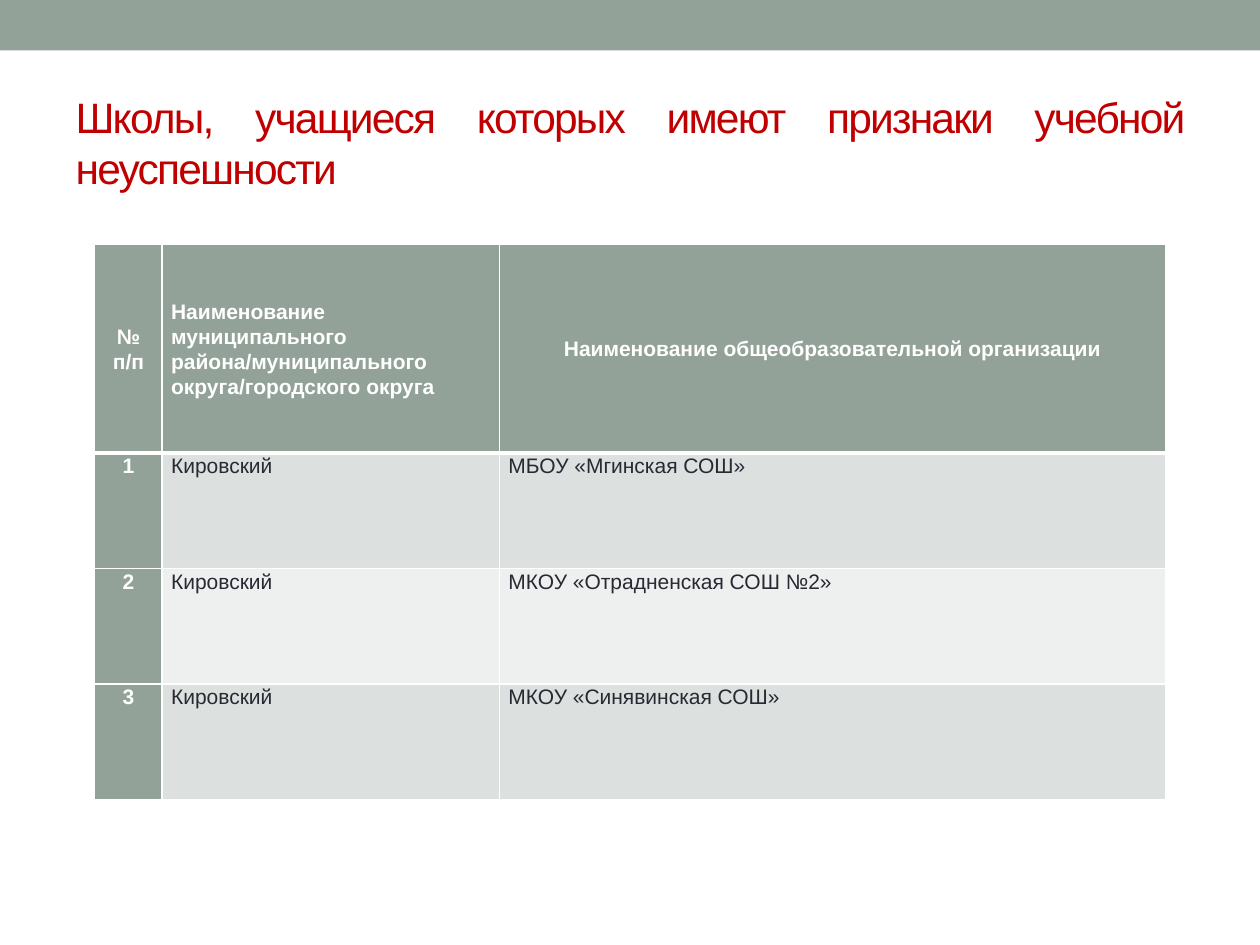
from lxml.etree import SubElement
from pptx import Presentation
from pptx.dml.color import RGBColor
from pptx.enum.shapes import MSO_SHAPE as Shape
from pptx.enum.text import MSO_ANCHOR as Anchor, PP_ALIGN as Align
from pptx.oxml.ns import qn
from pptx.util import Cm, Pt

# Content
TITLE = "Школы, учащиеся которых имеют признаки учебной неуспешности"
HEADER = (
    "№ п/п",
    "Наименование муниципального района/муниципального округа/городского округа",
    "Наименование общеобразовательной организации",
)
SCHOOLS = [
    ("Кировский", "МБОУ «Мгинская СОШ»"),
    ("Кировский", "МКОУ «Отрадненская СОШ №2»"),
    ("Кировский", "МКОУ «Синявинская СОШ»"),
]

# Look
FONT = "Arial"
SAGE, WHITE, RED, INK = "93A299", "FFFFFF", "C00000", "292934"
BANDS = ("DCE0DE", "EEF0EF")
COLUMN_WIDTHS = (1.36, 6.8, 13.43)
HEADER_HEIGHT, SCHOOL_HEIGHT = 4.2, 2.33
THIN, THICK = 1, 3


def rgb(value):
    return RGBColor.from_string(value)


def format_runs(paragraph, size, color, bold=False):
    for run in paragraph.runs:
        run.font.name = FONT
        run.font.size = Pt(size)
        run.font.bold = bold
        run.font.color.rgb = rgb(color)


def add_borders(cell, top, bottom):
    """Draw white cell borders; they must precede the fill in the XML."""
    properties = cell._tc.get_or_add_tcPr()
    for side, width in (("L", THIN), ("R", THIN), ("T", top), ("B", bottom)):
        line = SubElement(properties, qn(f"a:ln{side}"), w=str(Pt(width)))
        fill = SubElement(line, qn("a:solidFill"))
        SubElement(fill, qn("a:srgbClr"), val=WHITE)


def format_cell(cell, text, row, column):
    is_header = row == 0
    is_label = is_header or column == 0
    add_borders(cell, THICK if row == 1 else THIN, THICK if is_header else THIN)
    cell.fill.solid()
    cell.fill.fore_color.rgb = rgb(SAGE if is_label else BANDS[(row - 1) % 2])
    cell.margin_left = cell.margin_right = Cm(0.18)
    cell.margin_top = cell.margin_bottom = 0
    cell.vertical_anchor = Anchor.MIDDLE if is_header else Anchor.TOP
    cell.text_frame.text = text
    paragraph = cell.text_frame.paragraphs[0]
    centred = column == 0 or (is_header and column == 2)
    paragraph.alignment = Align.CENTER if centred else Align.LEFT
    paragraph.line_spacing = 1.07
    paragraph.space_after = Pt(0 if is_label else 8)
    format_runs(paragraph, 12, WHITE if is_label else INK, bold=is_label)


presentation = Presentation()
presentation.slide_width, presentation.slide_height = Cm(25.4), Cm(19.05)
slide = presentation.slides.add_slide(presentation.slide_layouts[5])

# Top band
band = slide.shapes.add_shape(Shape.RECTANGLE, 0, 0, presentation.slide_width, Cm(1.02))
band.shadow.inherit = False
band.fill.solid()
band.fill.fore_color.rgb = rgb(SAGE)
band.line.fill.background()

# Title
title = slide.shapes.title
title.left, title.top, title.width, title.height = Cm(1.27), Cm(1.5), Cm(22.86), Cm(2.74)
title.text_frame.text = TITLE
title.text_frame.word_wrap = True
title.text_frame.vertical_anchor = Anchor.MIDDLE
heading = title.text_frame.paragraphs[0]
heading.alignment = Align.JUSTIFY
format_runs(heading, 24.3, RED)
heading.runs[0].font._element.set("spc", "-100")

# Table of schools
rows = [HEADER] + [(str(number), *school) for number, school in enumerate(SCHOOLS, 1)]
heights = [HEADER_HEIGHT] + [SCHOOL_HEIGHT] * len(SCHOOLS)
table = slide.shapes.add_table(
    len(rows), len(HEADER), Cm(1.91), Cm(4.93), Cm(sum(COLUMN_WIDTHS)), Cm(sum(heights))
).table
for column, width in zip(table.columns, COLUMN_WIDTHS):
    column.width = Cm(width)
for row_index, (texts, height) in enumerate(zip(rows, heights)):
    table.rows[row_index].height = Cm(height)
    for column_index, text in enumerate(texts):
        format_cell(table.cell(row_index, column_index), text, row_index, column_index)

presentation.save("out.pptx")
